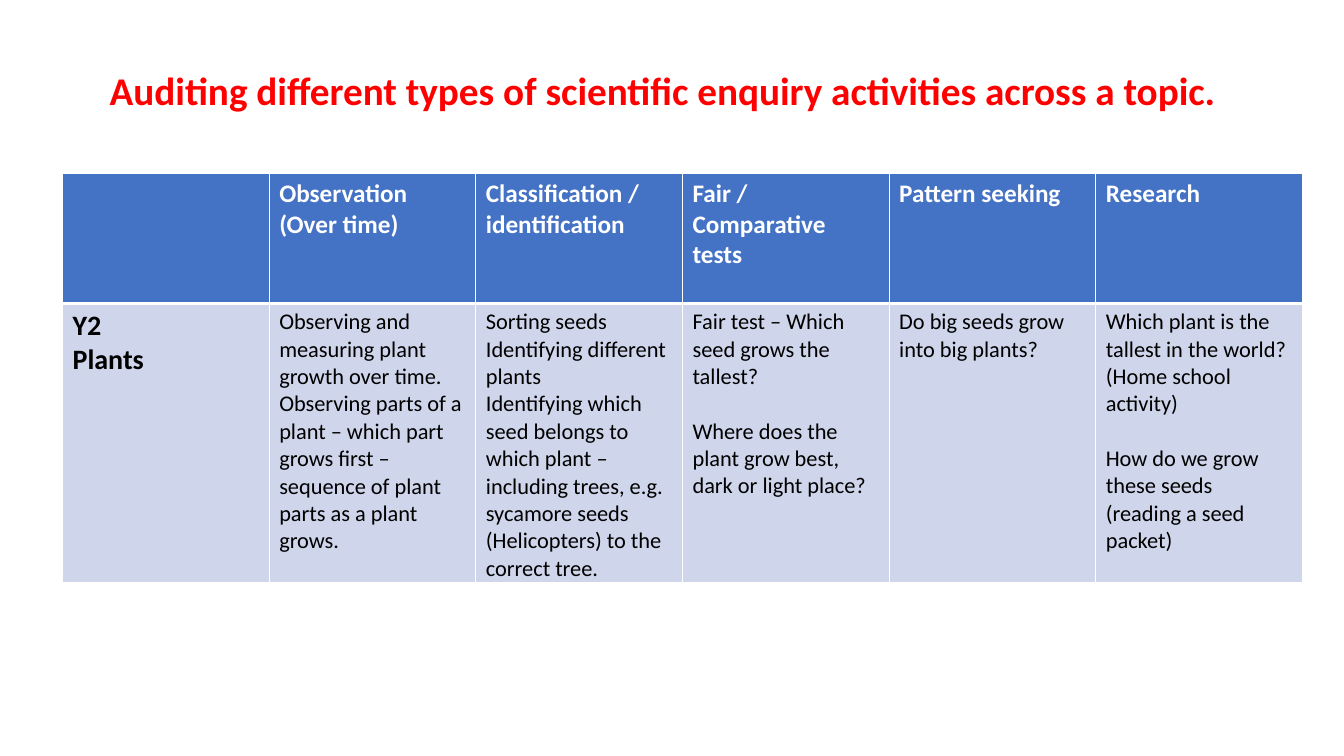
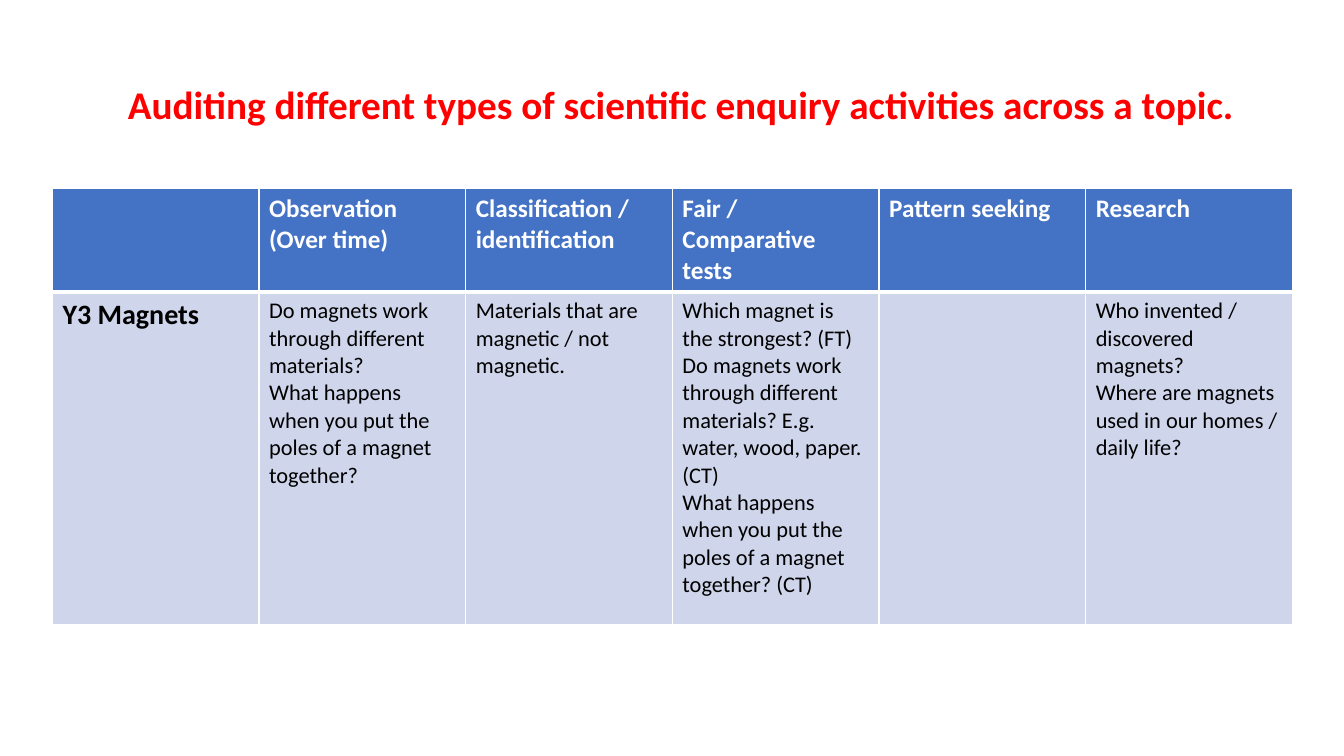
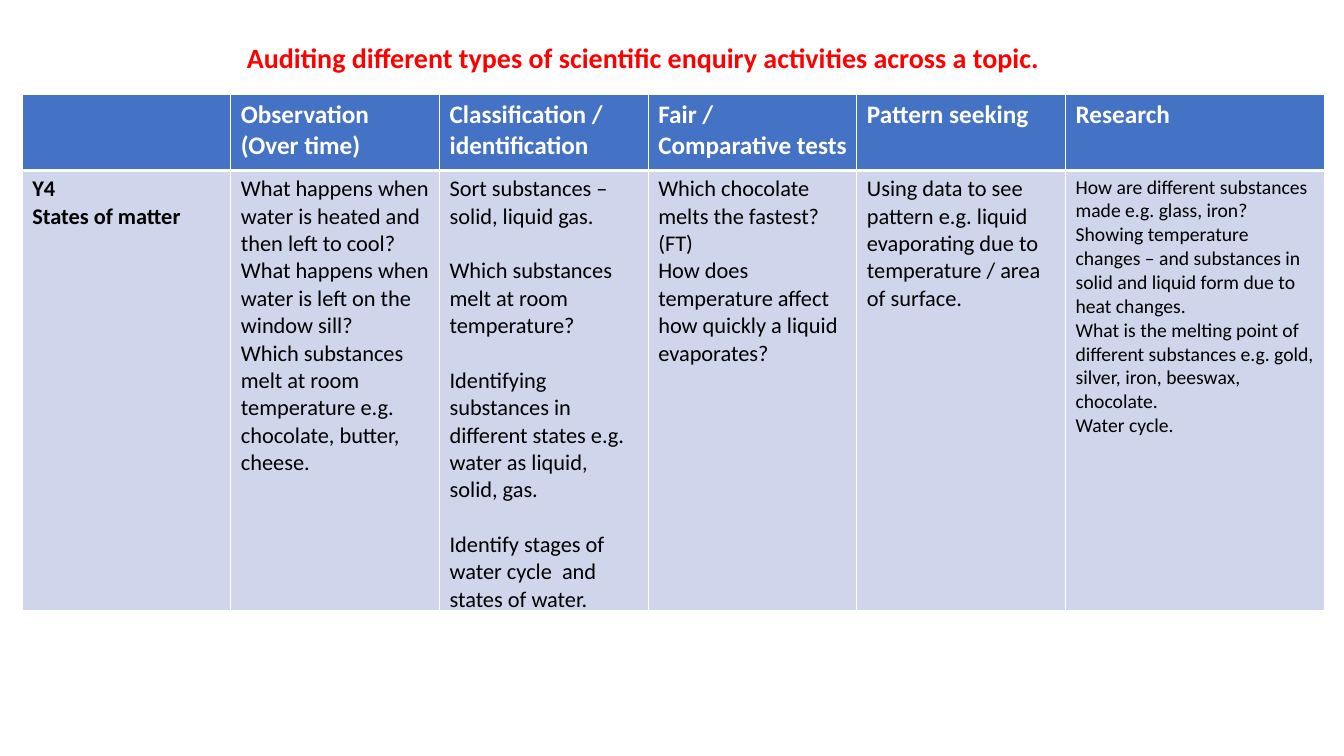
from dataclasses import dataclass

import pptx
import pptx.dml.color
import pptx.enum.text
import pptx.oxml
import pptx.oxml.ns
import pptx.util

Inches = pptx.util.Inches
Pt = pptx.util.Pt
RGBColor = pptx.dml.color.RGBColor

RED = RGBColor(0xFF, 0x00, 0x00)
WHITE = RGBColor(0xFF, 0xFF, 0xFF)
BLACK = RGBColor(0x00, 0x00, 0x00)
HEADER_BLUE = RGBColor(0x44, 0x72, 0xC4)
BODY_BLUE = RGBColor(0xCF, 0xD5, 0xEA)

FONT = "Calibri"
TITLE = "Auditing different types of scientific enquiry activities across a topic."
HEADERS = (
    "",
    "Observation (Over time)",
    "Classification / identification",
    "Fair / Comparative tests",
    "Pattern seeking",
    "Research",
)
HEADER_SIZE = 18
GAP = 19.5
THIN, THICK = 1, 3


@dataclass(frozen=True)
class Entry:
    lines: tuple[str, ...] = ()
    size: int = 16
    bold: bool = False
    spaced: bool = False


@dataclass(frozen=True)
class Box:
    left: float
    top: float
    width: float
    height: float


@dataclass(frozen=True)
class Audit:
    title_box: Box
    title_size: int
    left: float
    top: float
    widths: tuple[float, ...]
    heights: tuple[float, float]
    entries: tuple[Entry, ...]


AUDITS = (
    Audit(
        Box(0.99, 0.61, 11.34, 0.57), 28, 0.62, 1.72, (2.05,) * 6, (1.29, 2.77),
        (
            Entry(("Y2", "Plants"), size=20, bold=True),
            Entry((
                "Observing and measuring plant growth over time.",
                "Observing parts of a plant – which part grows first – "
                "sequence of plant parts as a plant grows.",
            )),
            Entry((
                "Sorting seeds",
                "Identifying different plants",
                "Identifying which seed belongs to which plant – including trees, "
                "e.g. sycamore seeds (Helicopters) to the correct tree.",
            )),
            Entry((
                "Fair test – Which seed grows the tallest?",
                "Where does the plant grow best, dark or light place?",
            ), spaced=True),
            Entry(("Do big seeds grow into big plants?",)),
            Entry((
                "Which plant is the tallest in the world? (Home school activity)",
                "How do we grow these seeds (reading a seed packet)",
            ), spaced=True),
        ),
    ),
    Audit(
        Box(1.17, 0.75, 11.3, 0.57), 28, 0.52, 1.87, (2.05,) * 6, (1.03, 3.3),
        (
            Entry(("Y3 Magnets",), size=20, bold=True),
            Entry((
                "Do magnets work through different materials?",
                "What happens when you put the poles of a magnet together?",
            )),
            Entry(("Materials that are magnetic / not magnetic.",)),
            Entry((
                "Which magnet is the strongest? (FT)",
                "Do magnets work through different materials? "
                "E.g. water, wood, paper. (CT)",
                "What happens when you put the poles of a magnet together? (CT)",
            )),
            Entry(),
            Entry((
                "Who invented / discovered magnets?",
                "Where are magnets used in our homes / daily life?",
            )),
        ),
    ),
    Audit(
        Box(2.35, 0.35, 8.48, 0.44), 20, 0.22, 0.94, (2.07,) * 5 + (2.57,), (0.75, 4.37),
        (
            Entry(("Y4", "States of matter"), bold=True),
            Entry((
                "What happens when water is heated and then left to cool?",
                "What happens when water is left on the window sill?",
                "Which substances melt at room temperature e.g. chocolate, butter, cheese.",
            )),
            Entry((
                "Sort substances – solid, liquid gas.",
                "Which substances melt at room temperature?",
                "Identifying substances in different states e.g. "
                "water as liquid, solid, gas.",
                "Identify stages of water cycle  and states of water.",
            ), spaced=True),
            Entry((
                "Which chocolate melts the fastest? (FT)",
                "How does temperature affect how quickly a liquid evaporates?",
            )),
            Entry((
                "Using data to see pattern e.g. liquid evaporating due to "
                "temperature / area of surface.",
            )),
            Entry((
                "How are different substances made e.g. glass, iron? "
                "Showing temperature changes – and substances in solid and "
                "liquid form due to heat changes.",
                "What is the melting point of different substances e.g. gold, "
                "silver, iron, beeswax, chocolate.",
                "Water cycle.",
            ), size=14),
        ),
    ),
)


def write_text(tf, entry: Entry, color: RGBColor) -> None:
    tf.text = "\n".join(entry.lines)
    for i, p in enumerate(tf.paragraphs):
        if entry.spaced and i:
            p.space_before = Pt(GAP)
        for r in p.runs:
            r.font.name = FONT
            r.font.size = Pt(entry.size)
            r.font.bold = entry.bold
            r.font.color.rgb = color


def set_borders(cell, top: int, bottom: int) -> None:
    tc_pr = cell._tc.get_or_add_tcPr()
    for side, width in (("L", THIN), ("R", THIN), ("T", top), ("B", bottom)):
        tc_pr.append(pptx.oxml.parse_xml(
            f'<a:ln{side} {pptx.oxml.ns.nsdecls("a")} w="{Pt(width)}">'
            f'<a:solidFill><a:srgbClr val="{WHITE}"/></a:solidFill></a:ln{side}>'
        ))


def fill_cell(cell, entry: Entry, is_header: bool) -> None:
    write_text(cell.text_frame, entry, WHITE if is_header else BLACK)
    set_borders(cell, *((THIN, THICK) if is_header else (THICK, THIN)))
    cell.fill.solid()
    cell.fill.fore_color.rgb = HEADER_BLUE if is_header else BODY_BLUE
    if not is_header:
        cell.margin_bottom = 0


def add_table(s, audit: Audit) -> None:
    headers = tuple(
        Entry((h,) if h else (), size=HEADER_SIZE, bold=True) for h in HEADERS
    )
    table = s.shapes.add_table(
        len(audit.heights), len(audit.widths),
        Inches(audit.left), Inches(audit.top),
        Inches(sum(audit.widths)), Inches(sum(audit.heights)),
    ).table
    table.horz_banding = False
    for column, width in zip(table.columns, audit.widths):
        column.width = Inches(width)
    for i, (height, entries) in enumerate(zip(audit.heights, (headers, audit.entries))):
        table.rows[i].height = Inches(height)
        for j, entry in enumerate(entries):
            fill_cell(table.cell(i, j), entry, is_header=i == 0)


def add_title(s, box: Box, size: int) -> None:
    sp = s.shapes.add_textbox(
        Inches(box.left), Inches(box.top), Inches(box.width), Inches(box.height)
    )
    tf = sp.text_frame
    tf.word_wrap = True
    tf.auto_size = pptx.enum.text.MSO_AUTO_SIZE.SHAPE_TO_FIT_TEXT
    write_text(tf, Entry((TITLE,), size=size, bold=True), RED)


def main() -> None:
    prs = pptx.Presentation()
    prs.slide_width = Inches(13.33)
    prs.slide_height = Inches(7.5)
    for audit in AUDITS:
        s = prs.slides.add_slide(prs.slide_layouts[6])
        add_table(s, audit)
        add_title(s, audit.title_box, audit.title_size)
    prs.save("out.pptx")


if __name__ == "__main__":
    main()
